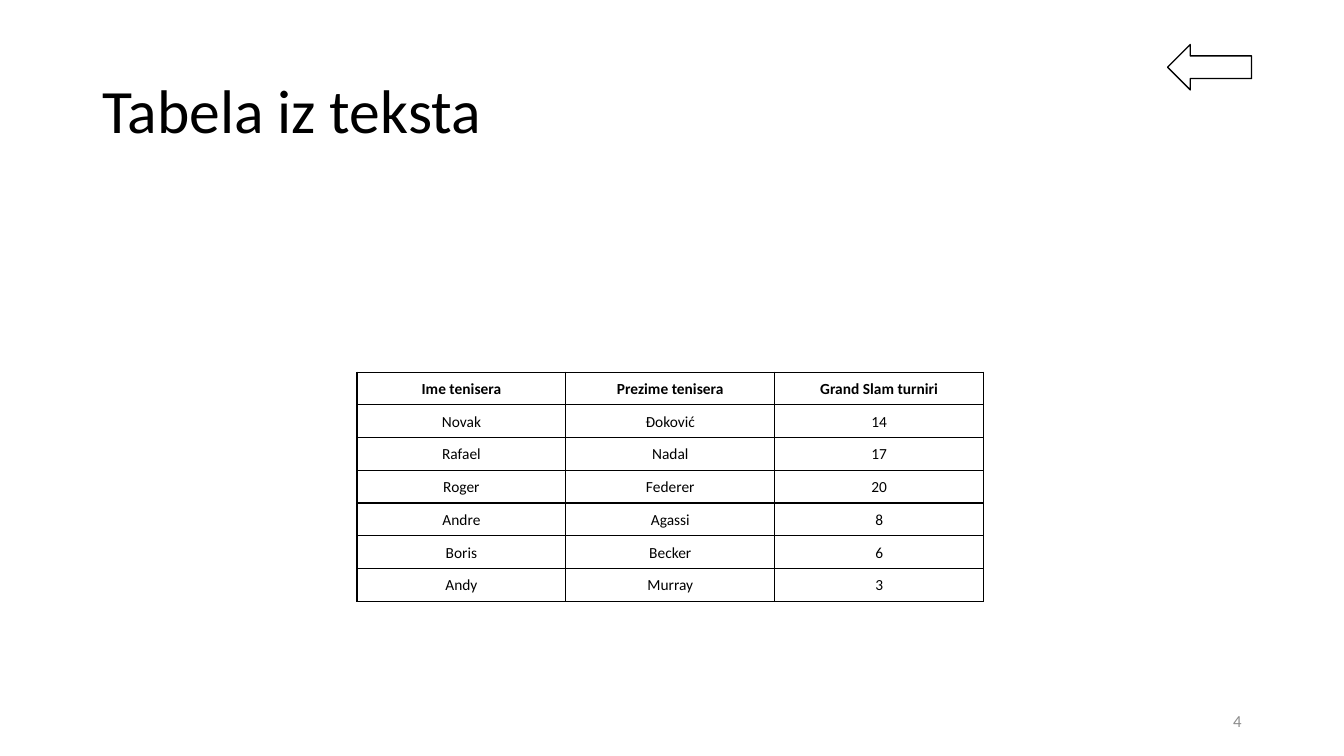
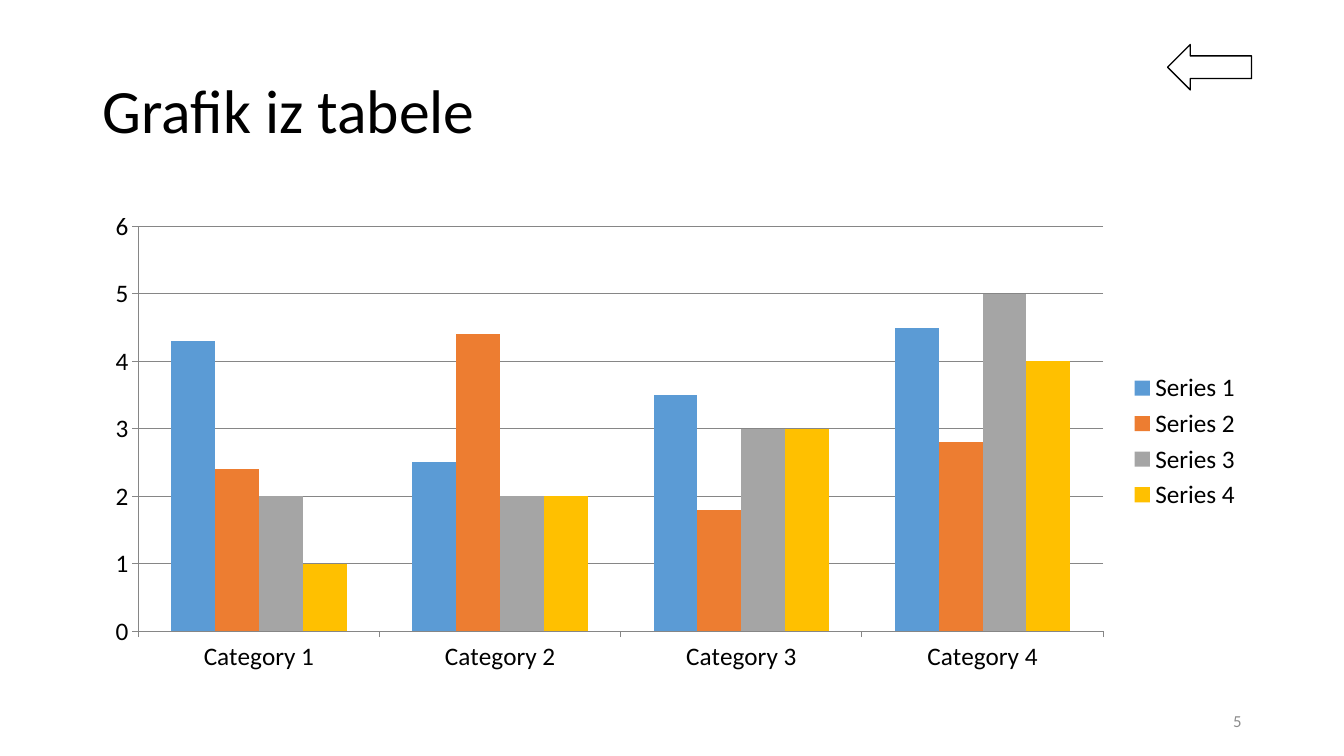
from lxml import etree
from pptx import Presentation
from pptx import util as u
from pptx.chart import data as chart_data
from pptx.dml import color
from pptx.enum import chart as charts, shapes, text
from pptx.oxml import ns

COLORS = {
    "paper": "FFFFFF", "ink": "000000", "number": "8C8C8C", "axis": "868686",
    "series": ["5B9BD5", "ED7D31", "A5A5A5", "FFC000"],
}
FONT = "Calibri"
COLUMNS, ROWS = 160, 90
LEFT, CONTENT_WIDTH = 11, 138

PLAYERS = [
    ["Ime tenisera", "Prezime tenisera", "Grand Slam turniri"],
    ["Novak", "Đoković", "14"],
    ["Rafael", "Nadal", "17"],
    ["Roger", "Federer", "20"],
    ["Andre", "Agassi", "8"],
    ["Boris", "Becker", "6"],
    ["Andy", "Murray", "3"],
]
CATEGORIES = [f"Category {number}" for number in range(1, 5)]
SERIES = {
    "Series 1": [4.3, 2.5, 3.5, 4.5],
    "Series 2": [2.4, 4.4, 1.8, 2.8],
    "Series 3": [2, 2, 3, 5],
    "Series 4": [1, 2, 3, 4],
}


def rgb(value):
    """Turn a hex string into a colour."""
    return color.RGBColor.from_string(value)


class Deck:
    """Hold the presentation, its style and the current slide."""

    def __init__(self):
        """Start an empty widescreen presentation."""
        self.presentation = Presentation()
        self.presentation.slide_width = u.Inches(13.33)
        self.presentation.slide_height = u.Inches(7.5)
        self.slide = None

    def box(self, column, row, columns, rows):
        """Convert grid columns and rows to left, top, width and height."""
        across = self.presentation.slide_width / COLUMNS
        down = self.presentation.slide_height / ROWS
        return (round(column * across), round(row * down),
                round(columns * across), round(rows * down))

    def style(self, font, size, ink="ink", bold=False):
        """Apply the deck's typeface with a size, colour and weight."""
        font.name, font.size, font.bold = FONT, u.Pt(size), bold
        font.color.rgb = rgb(COLORS[ink])

    def new_slide(self, title, number):
        """Add a slide with the shared back arrow, title and number."""
        layout = self.presentation.slide_layouts[6]
        self.slide = self.presentation.slides.add_slide(layout)
        self.back_arrow()
        title_paragraph = self.text(title, (LEFT, 4.8, CONTENT_WIDTH, 17.4), 44)
        title_paragraph.line_spacing = 0.9
        number_paragraph = self.text(str(number), (113, 83.4, 36, 4.8), 12, "number")
        number_paragraph.alignment = text.PP_ALIGN.RIGHT

    def back_arrow(self):
        """Draw the outlined arrow in the top right corner."""
        arrow = self.slide.shapes.add_shape(
            shapes.MSO_SHAPE.LEFT_ARROW, *self.box(139, 5.3, 10, 5.4))
        arrow.shadow.inherit = False
        arrow.fill.solid()
        arrow.fill.fore_color.rgb = rgb(COLORS["paper"])
        arrow.line.color.rgb = rgb(COLORS["ink"])
        arrow.line.width = u.Pt(1)

    def text(self, words, place, size, ink="ink"):
        """Add one vertically centred paragraph and return it."""
        frame = self.slide.shapes.add_textbox(*self.box(*place)).text_frame
        frame.word_wrap = True
        frame.vertical_anchor = text.MSO_ANCHOR.MIDDLE
        paragraph = frame.paragraphs[0]
        paragraph.text = words
        self.style(paragraph.font, size, ink)
        return paragraph

    def border(self, cell):
        """Put a thin line on all four sides of a table cell."""
        properties = cell._tc.get_or_add_tcPr()
        for position, side in enumerate(("lnL", "lnR", "lnT", "lnB")):
            line = etree.Element(ns.qn(f"a:{side}"), w=str(u.Pt(1)))
            fill = etree.SubElement(line, ns.qn("a:solidFill"))
            etree.SubElement(fill, ns.qn("a:srgbClr"), val=COLORS["ink"])
            properties.insert(position, line)

    def table(self, records, place):
        """Add a bordered table whose first record is a bold heading."""
        left, top, width, height = self.box(*place)
        table = self.slide.shapes.add_table(
            len(records), len(records[0]), left, top, width, height).table
        table.first_row = table.horz_banding = False
        for row, record in enumerate(records):
            for column, words in enumerate(record):
                cell = table.cell(row, column)
                cell.fill.solid()
                cell.fill.fore_color.rgb = rgb(COLORS["paper"])
                cell.vertical_anchor = text.MSO_ANCHOR.MIDDLE
                cell.margin_left = cell.margin_right = u.Inches(0.07)
                cell.margin_top = cell.margin_bottom = 0
                cell.text = words
                paragraph = cell.text_frame.paragraphs[0]
                paragraph.alignment = text.PP_ALIGN.CENTER
                paragraph.line_spacing = 1.07
                self.style(paragraph.font, 11, bold=row == 0)
                self.border(cell)

    def column_chart(self, categories, series, place):
        """Add a clustered column chart with a legend on the right."""
        data = chart_data.CategoryChartData()
        data.categories = categories
        for name, values in series.items():
            data.add_series(name, values)
        chart = self.slide.shapes.add_chart(
            charts.XL_CHART_TYPE.COLUMN_CLUSTERED, *self.box(*place), data).chart
        self.style(chart.font, 18)
        chart.has_title = False
        chart.has_legend = True
        chart.legend.position = charts.XL_LEGEND_POSITION.RIGHT
        chart.legend.include_in_layout = False
        plot = chart.plots[0]
        plot.vary_by_categories = False
        plot.gap_width, plot.overlap = 150, 0
        for bars, fill in zip(plot.series, COLORS["series"]):
            bars.format.fill.solid()
            bars.format.fill.fore_color.rgb = rgb(fill)
        chart.value_axis.minimum_scale = 0
        chart.value_axis.maximum_scale = 6
        chart.value_axis.major_unit = 1
        chart.value_axis.has_major_gridlines = True
        for axis in (chart.category_axis, chart.value_axis):
            axis.major_tick_mark = charts.XL_TICK_MARK.OUTSIDE
            axis.format.line.color.rgb = rgb(COLORS["axis"])
        chart.value_axis.major_gridlines.format.line.color.rgb = rgb(COLORS["axis"])


def main():
    """Build and save both slides."""
    deck = Deck()
    deck.new_slide("Tabela iz teksta", 4)
    deck.table(PLAYERS, (42.5, 44.3, 74.6, 27.3))
    deck.new_slide("Grafik iz tabele", 5)
    deck.column_chart(CATEGORIES, SERIES, (LEFT, 24, CONTENT_WIDTH, 57.1))
    deck.presentation.save("out.pptx")


if __name__ == "__main__":
    main()
